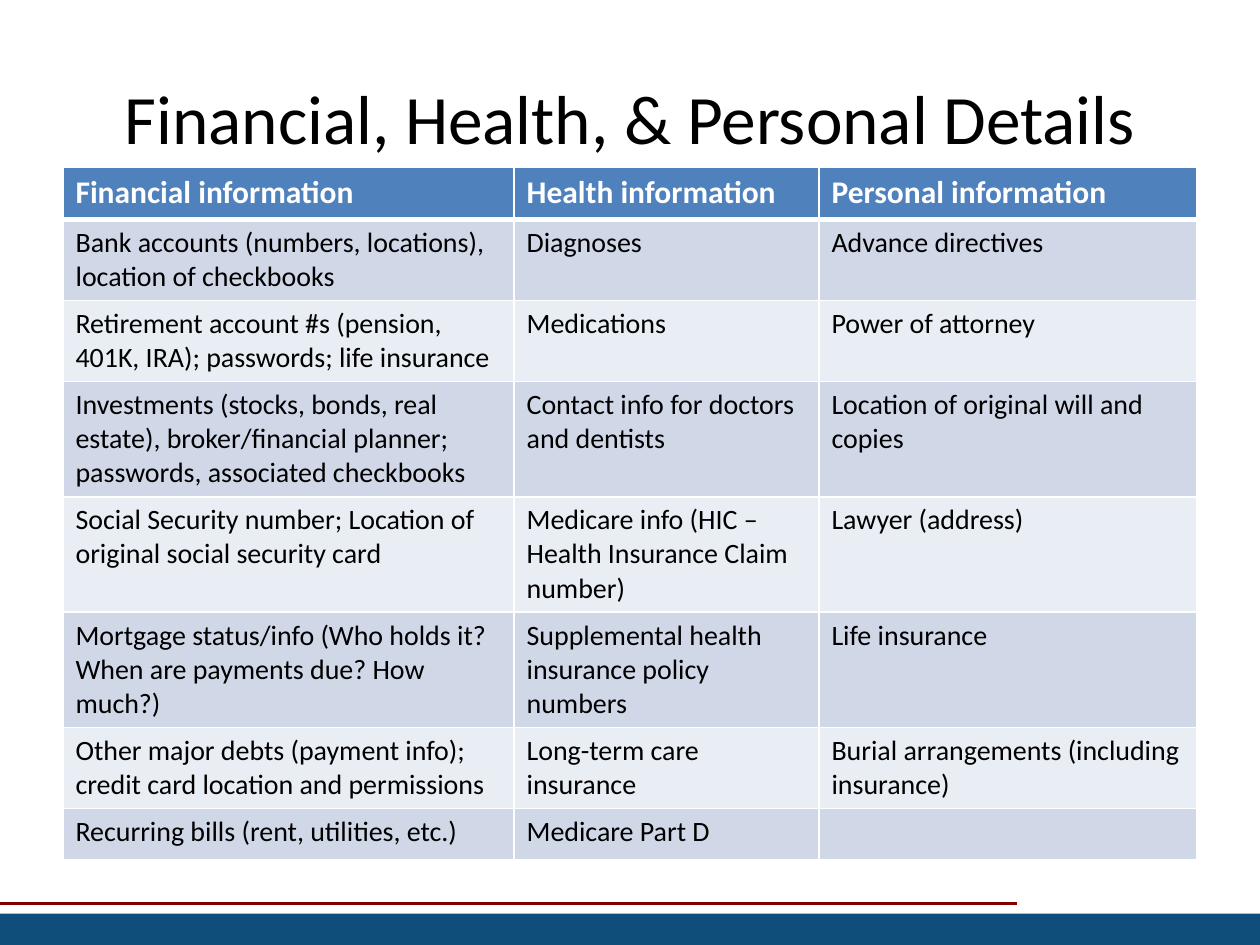
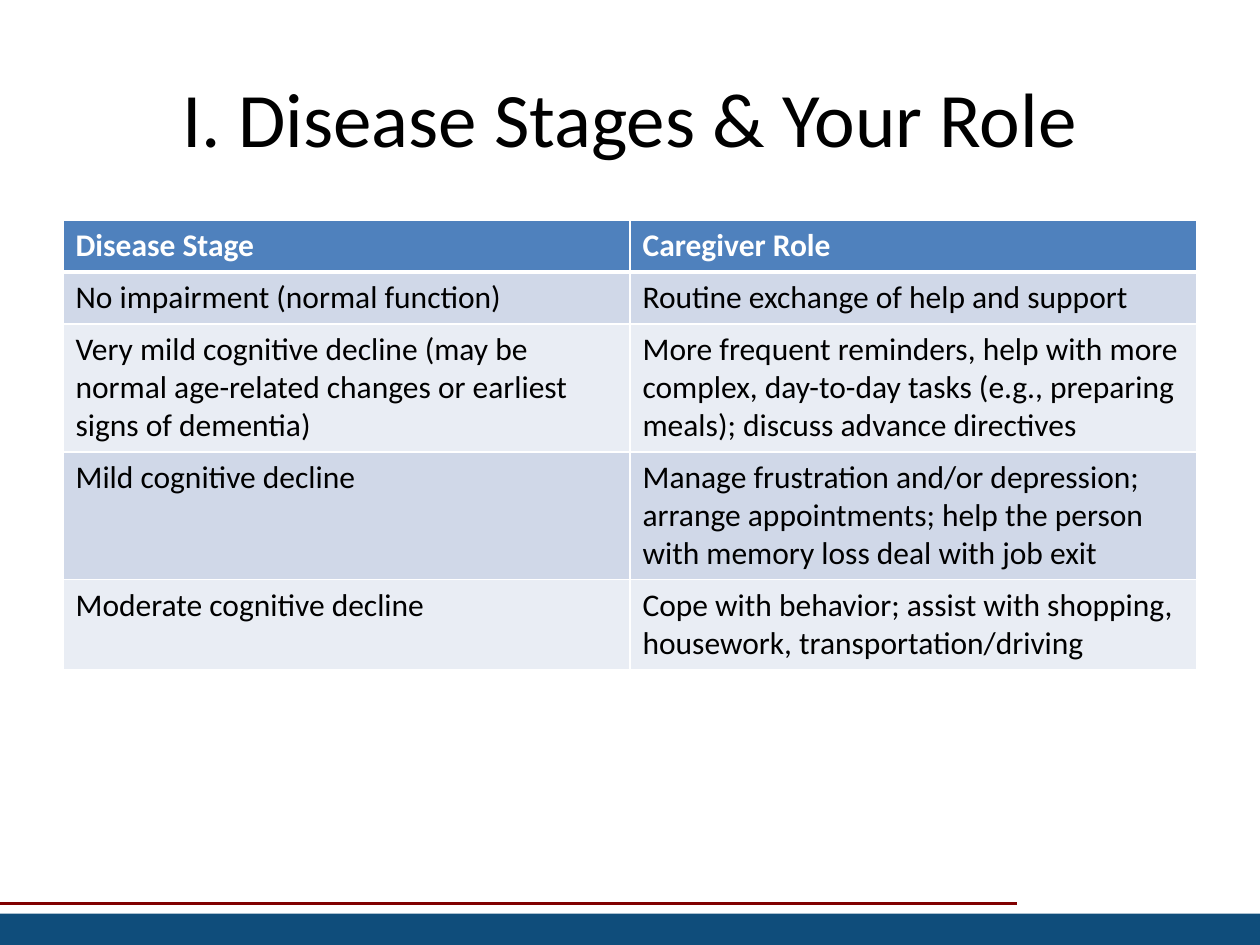
from dataclasses import dataclass

from lxml.etree import SubElement
from pptx import Presentation
from pptx.dml.color import RGBColor
from pptx.enum.shapes import MSO_CONNECTOR, MSO_SHAPE
from pptx.enum.text import MSO_ANCHOR, PP_ALIGN
from pptx.oxml.ns import qn
from pptx.util import Inches, Pt


@dataclass(frozen=True)
class Theme:
    font: str = "Calibri"
    text: str = "000000"
    white: str = "FFFFFF"
    header: str = "4F81BD"
    bands: tuple = ("D0D8E8", "E9EDF4")
    footer: str = "0F4D7B"
    rule: str = "800000"
    header_size: float = 18
    rule_width: float = 1.5
    border: float = 1
    header_border: float = 3


THEME = Theme()
WIDTH, HEIGHT = 10, 7.5
MARGIN = 0.5
FOOTER_HEIGHT = 0.25
ROW_HEIGHT = 0.41

SLIDES = [
    {
        "title": "Financial, Health, & Personal Details",
        "title_size": 39.6,
        "body_size": 16,
        "table_top": 1.33,
        "columns": (3.58, 2.42, 3),
        "rows": [
            ("Financial information", "Health information", "Personal information"),
            ("Bank accounts (numbers, locations), location of checkbooks",
             "Diagnoses", "Advance directives"),
            ("Retirement account #s (pension, 401K, IRA); passwords; life insurance",
             "Medications", "Power of attorney"),
            ("Investments (stocks, bonds, real estate), broker/financial planner; "
             "passwords, associated checkbooks",
             "Contact info for doctors and dentists",
             "Location of original will and copies"),
            ("Social Security number; Location of original social security card",
             "Medicare info (HIC –Health Insurance Claim number)",
             "Lawyer (address)"),
            ("Mortgage status/info (Who holds it? When are payments due? How much?)",
             "Supplemental health insurance policy numbers", "Life insurance"),
            ("Other major debts (payment info); credit card location and permissions",
             "Long-term care insurance",
             "Burial arrangements (including insurance)"),
            ("Recurring bills (rent, utilities, etc.)", "Medicare Part D", ""),
        ],
    },
    {
        "title": "I. Disease Stages & Your Role",
        "title_size": 44,
        "body_size": 18,
        "table_top": 1.75,
        "columns": (4.5, 4.5),
        "rows": [
            ("Disease Stage", "Caregiver Role"),
            ("No impairment (normal function)",
             "Routine exchange of help and support"),
            ("Very mild cognitive decline (may be normal age-related changes or "
             "earliest signs of dementia)",
             "More frequent reminders, help with more complex, day-to-day tasks "
             "(e.g., preparing meals); discuss advance directives"),
            ("Mild cognitive decline",
             "Manage frustration and/or depression; arrange appointments; help "
             "the person with memory loss deal with job exit"),
            ("Moderate cognitive decline",
             "Cope with behavior; assist with shopping, housework, "
             "transportation/driving"),
        ],
    },
]


def color(value):
    return RGBColor.from_string(value)


def add_span(para, text, size, ink, bold=False):
    span = para.add_run()
    span.text = text
    span.font.name = THEME.font
    span.font.size = Pt(size)
    span.font.bold = bold
    span.font.color.rgb = color(ink)


def add_footer(page):
    rule_y = Inches(HEIGHT - FOOTER_HEIGHT - 0.08)
    rule = page.shapes.add_connector(
        MSO_CONNECTOR.STRAIGHT, Inches(-0.01), rule_y, Inches(8.07), rule_y)
    rule.line.color.rgb = color(THEME.rule)
    rule.line.width = Pt(THEME.rule_width)
    SubElement(rule.element.spPr, qn("a:effectLst"))

    band = page.shapes.add_shape(
        MSO_SHAPE.RECTANGLE, 0, Inches(HEIGHT - FOOTER_HEIGHT),
        Inches(WIDTH), Inches(FOOTER_HEIGHT))
    band.shadow.inherit = False
    band.fill.solid()
    band.fill.fore_color.rgb = color(THEME.footer)
    band.line.fill.background()


def add_title(page, text, size):
    title = page.shapes.title
    title.left, title.top = Inches(MARGIN), Inches(0.3)
    title.width, title.height = Inches(WIDTH - 2 * MARGIN), Inches(1.25)
    title.text_frame.vertical_anchor = MSO_ANCHOR.MIDDLE
    para = title.text_frame.paragraphs[0]
    para.alignment = PP_ALIGN.CENTER
    add_span(para, text, size, THEME.text)


def set_borders(cell, row):
    widths = {
        "lnL": THEME.border,
        "lnR": THEME.border,
        "lnT": THEME.header_border if row == 1 else THEME.border,
        "lnB": THEME.header_border if row == 0 else THEME.border,
    }
    properties = cell._tc.get_or_add_tcPr()
    for side, width in widths.items():
        line = SubElement(properties, qn(f"a:{side}"), w=str(Pt(width)))
        fill = SubElement(line, qn("a:solidFill"))
        SubElement(fill, qn("a:srgbClr"), val=THEME.white)


def add_grid(page, content):
    rows, columns = content["rows"], content["columns"]
    table = page.shapes.add_table(
        len(rows), len(columns), Inches(MARGIN), Inches(content["table_top"]),
        Inches(sum(columns)), Inches(ROW_HEIGHT * len(rows))).table
    for column, width in zip(table.columns, columns):
        column.width = Inches(width)
    for row, texts in enumerate(rows):
        is_header = row == 0
        fill = THEME.header if is_header else THEME.bands[(row - 1) % 2]
        size = THEME.header_size if is_header else content["body_size"]
        ink = THEME.white if is_header else THEME.text
        for column, text in enumerate(texts):
            cell = table.cell(row, column)
            set_borders(cell, row)
            cell.fill.solid()
            cell.fill.fore_color.rgb = color(fill)
            if text:
                add_span(cell.text_frame.paragraphs[0], text, size, ink, is_header)


def main():
    deck = Presentation()
    deck.slide_width, deck.slide_height = Inches(WIDTH), Inches(HEIGHT)
    title_only = deck.slide_layouts.get_by_name("Title Only")
    for content in SLIDES:
        page = deck.slides.add_slide(title_only)
        add_footer(page)
        add_title(page, content["title"], content["title_size"])
        add_grid(page, content)
    deck.save("out.pptx")


if __name__ == "__main__":
    main()
